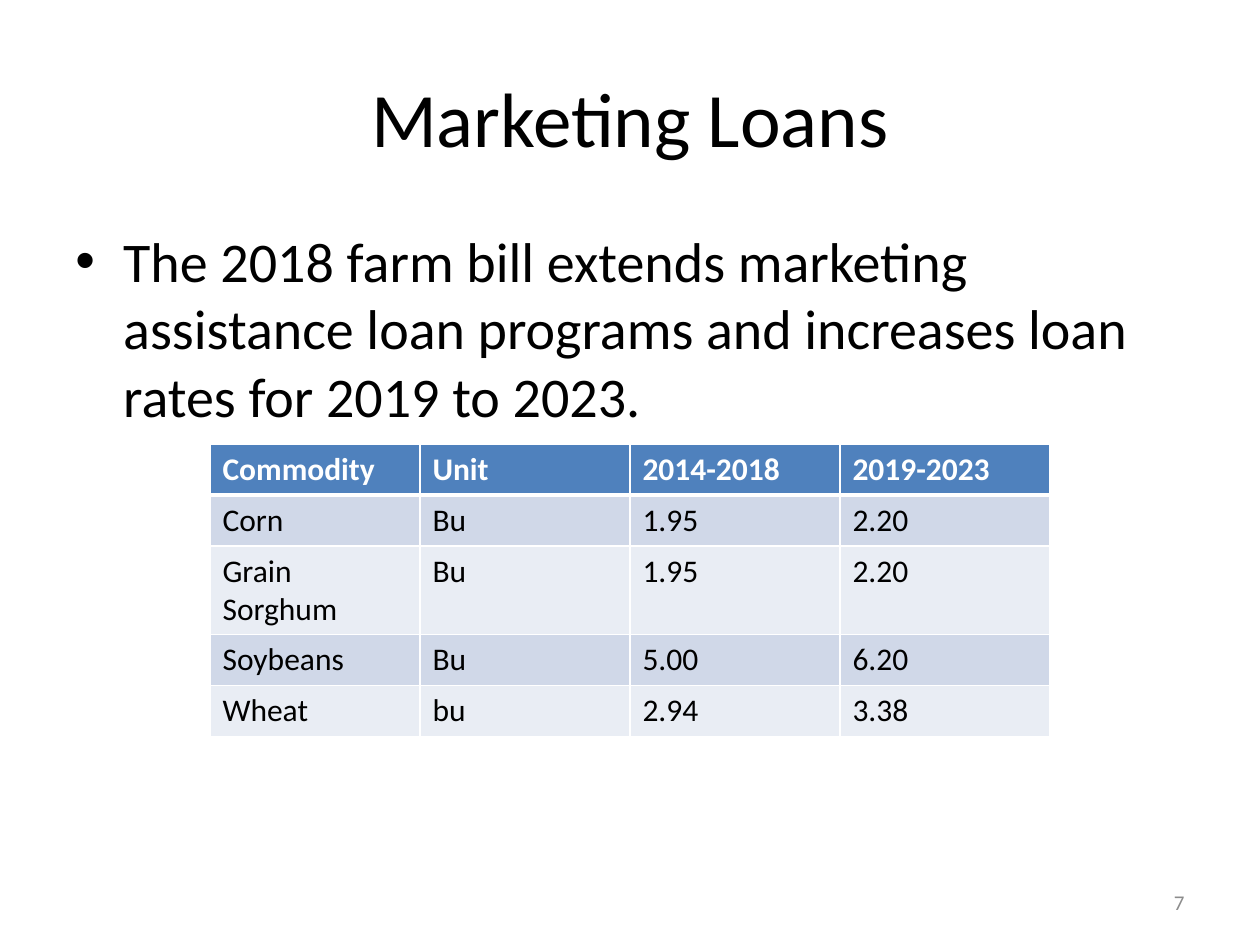
from dataclasses import dataclass

from lxml import etree
from pptx import Presentation
from pptx import util as u
from pptx.dml.color import RGBColor
from pptx.enum import text
from pptx.oxml import ns


@dataclass(frozen=True)
class Theme:
    font: str = "Calibri"
    ink: str = "000000"
    paper: str = "FFFFFF"
    muted: str = "8C8C8C"
    header: str = "4F81BD"
    bands: tuple = ("D0D8E8", "E9EDF4")
    title: int = 44
    body: int = 32
    table: int = 18
    footer: int = 12
    rule: int = 1
    header_rule: int = 3


THEME = Theme()
WIDTH, HEIGHT = u.Inches(10), u.Inches(7.5)
LOAN_RATES = (
    ("Commodity", "Unit", "2014-2018", "2019-2023"),
    ("Corn", "Bu", "1.95", "2.20"),
    ("Grain Sorghum", "Bu", "1.95", "2.20"),
    ("Soybeans", "Bu", "5.00", "6.20"),
    ("Wheat", "bu", "2.94", "3.38"),
)


def share(left, top, width, height):
    return (round(left * WIDTH), round(top * HEIGHT),
            round(width * WIDTH), round(height * HEIGHT))


def apply(target, values):
    for name, value in values.items():
        setattr(target, name, value)


def write(paragraph, wording, size, color, bold=False):
    run = paragraph.add_run()
    run.text = wording
    apply(run.font, {"name": THEME.font, "size": u.Pt(size), "bold": bold})
    run.font.color.rgb = RGBColor.from_string(color)


def add_text(slide, box, wording, size, color, align, anchor):
    frame = slide.shapes.add_textbox(*box).text_frame
    apply(frame, {"word_wrap": True, "vertical_anchor": anchor})
    paragraph = frame.paragraphs[0]
    paragraph.alignment = align
    write(paragraph, wording, size, color)
    return paragraph


def add_title(slide, box):
    add_text(slide, box, "Marketing Loans", THEME.title, THEME.ink,
             text.PP_ALIGN.CENTER, text.MSO_ANCHOR.MIDDLE)


def add_body(slide, box):
    wording = ("The 2018 farm bill extends marketing assistance loan programs "
               "and increases loan rates for 2019 to 2023.")
    paragraph = add_text(slide, box, wording, THEME.body, THEME.ink,
                         text.PP_ALIGN.LEFT, text.MSO_ANCHOR.TOP)
    properties = paragraph._p.get_or_add_pPr()
    indent = u.Inches(0.38)
    properties.set("marL", str(indent))
    properties.set("indent", str(-indent))
    etree.SubElement(properties, ns.qn("a:buFont"), typeface="Arial")
    etree.SubElement(properties, ns.qn("a:buChar"), char="•")


def add_page_number(slide, box):
    add_text(slide, box, "7", THEME.footer, THEME.muted,
             text.PP_ALIGN.RIGHT, text.MSO_ANCHOR.MIDDLE)


def add_borders(cell, top, bottom):
    properties = cell._tc.get_or_add_tcPr()
    widths = {"lnL": THEME.rule, "lnR": THEME.rule, "lnT": top, "lnB": bottom}
    for position, (side, width) in enumerate(widths.items()):
        line = etree.Element(ns.qn(f"a:{side}"), w=str(u.Pt(width)))
        fill = etree.SubElement(line, ns.qn("a:solidFill"))
        etree.SubElement(fill, ns.qn("a:srgbClr"), val=THEME.paper)
        properties.insert(position, line)


def add_rate_table(slide, box):
    table = slide.shapes.add_table(len(LOAN_RATES), len(LOAN_RATES[0]), *box).table
    for row_index, row in enumerate(LOAN_RATES):
        is_header = row_index == 0
        background = THEME.header if is_header else THEME.bands[(row_index - 1) % 2]
        color = THEME.paper if is_header else THEME.ink
        top = THEME.header_rule if row_index == 1 else THEME.rule
        bottom = THEME.header_rule if is_header else THEME.rule
        for column_index, wording in enumerate(row):
            cell = table.cell(row_index, column_index)
            cell.fill.solid()
            cell.fill.fore_color.rgb = RGBColor.from_string(background)
            add_borders(cell, top, bottom)
            write(cell.text_frame.paragraphs[0], wording, THEME.table, color, is_header)


def main():
    presentation = Presentation()
    apply(presentation, {"slide_width": WIDTH, "slide_height": HEIGHT})
    slide = presentation.slides.add_slide(presentation.slide_layouts[6])
    add_title(slide, share(0.05, 0.04, 0.9, 1 / 6))
    add_body(slide, share(0.05, 7 / 30, 0.9, 0.66))
    add_page_number(slide, share(43 / 60, 0.93, 14 / 60, 0.05))
    add_rate_table(slide, share(1 / 6, 0.47, 2 / 3, 0.27))
    presentation.save("out.pptx")


if __name__ == "__main__":
    main()
